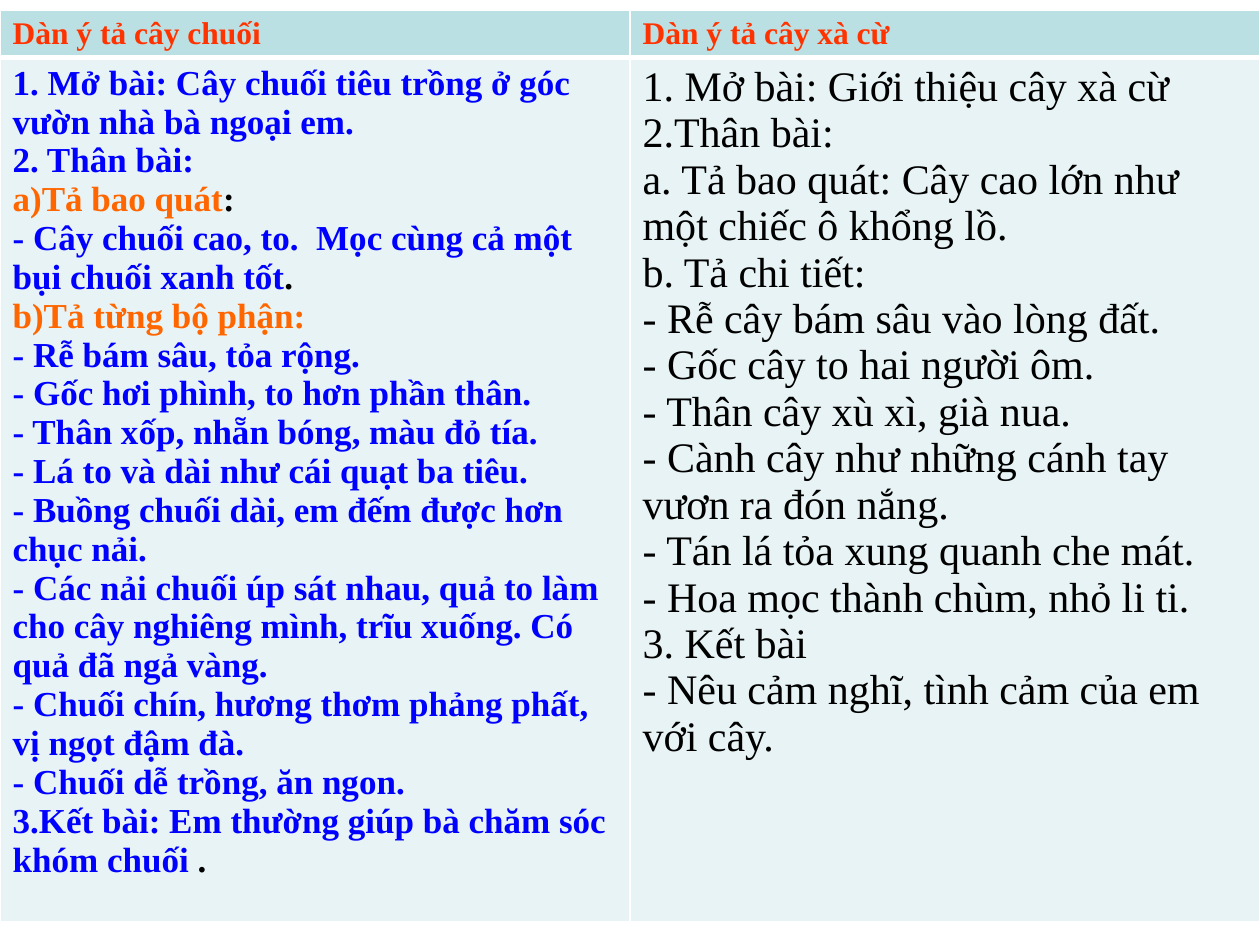
from lxml.etree import SubElement
from pptx import Presentation
from pptx.dml.color import RGBColor
from pptx.oxml.ns import qn
from pptx.util import Inches, Pt

FONT = "Times New Roman"
RED = RGBColor(0xFF, 0x33, 0x00)
BLUE = RGBColor(0x00, 0x00, 0xFF)
ORANGE = RGBColor(0xFF, 0x66, 0x00)
BLACK = RGBColor(0x00, 0x00, 0x00)
WHITE = RGBColor(0xFF, 0xFF, 0xFF)
HEADER_FILL = RGBColor(0xBB, 0xE0, 0xE3)
BODY_FILL = RGBColor(0xE7, 0xF3, 0xF4)

HEADINGS = ["Dàn ý tả cây chuối", "Dàn ý tả cây xà cừ"]
OVERVIEW = "Tả bao quát"
BANANA_OUTLINE = [
    [("1. Mở bài: Cây chuối tiêu trồng ở góc vườn nhà bà ngoại em.", BLUE)],
    [("2. Thân bài:", BLUE)],
    [(OVERVIEW, ORANGE), (":", BLACK)],
    [("- Cây chuối cao, to.  Mọc cùng cả một bụi chuối xanh tốt", BLUE), (".", BLACK)],
    [("b)Tả từng bộ phận:", ORANGE)],
    [("- Rễ bám sâu, tỏa rộng.", BLUE)],
    [("- Gốc hơi phình, to hơn phần thân.", BLUE)],
    [("- Thân xốp, nhẵn bóng, màu đỏ tía.", BLUE)],
    [("- Lá to và dài như cái quạt ba tiêu.", BLUE)],
    [("- Buồng chuối dài, em đếm được hơn chục nải.", BLUE)],
    [("- Các nải chuối úp sát nhau, quả to làm cho cây nghiêng mình, trĩu xuống. "
      "Có quả đã ngả vàng.", BLUE)],
    [("- Chuối chín, hương thơm phảng phất, vị ngọt đậm đà.", BLUE)],
    [("- Chuối dễ trồng, ăn ngon.", BLUE)],
    [("3.Kết bài: Em thường giúp bà chăm sóc khóm chuối", BLUE), (" .", BLACK)],
]
MAHOGANY_OUTLINE = [
    "1. Mở bài: Giới thiệu cây xà cừ",
    "2.Thân bài:",
    "a. Tả bao quát: Cây cao lớn như một chiếc ô khổng lồ.",
    "b. Tả chi tiết:",
    "- Rễ cây bám sâu vào lòng đất.",
    "- Gốc cây to hai người ôm.",
    "- Thân cây xù xì, già nua.",
    "- Cành cây như những cánh tay vươn ra đón nắng.",
    "- Tán lá tỏa xung quanh che mát.",
    "- Hoa mọc thành chùm, nhỏ li ti.",
    "3. Kết bài",
    "- Nêu cảm nghĩ, tình cảm của em với cây.",
]


def style_cell(cell, fill, bottom_width=1, top_width=1):
    """Give a cell white borders and a solid fill."""
    properties = cell._tc.get_or_add_tcPr()
    widths = {"a:lnL": 1, "a:lnR": 1, "a:lnT": top_width, "a:lnB": bottom_width}
    for side, width in widths.items():
        line = SubElement(properties, qn(side), w=str(Pt(width)))
        SubElement(SubElement(line, qn("a:solidFill")), qn("a:srgbClr"), val=str(WHITE))
    cell.fill.solid()
    cell.fill.fore_color.rgb = fill


def number_with_letter(paragraph):
    """Number a paragraph automatically in the form a)."""
    properties = paragraph._p.get_or_add_pPr()
    properties.set("marL", "0")
    properties.set("indent", "0")
    SubElement(properties, qn("a:buFontTx"))
    SubElement(properties, qn("a:buAutoNum"), type="alphaLcParenR")


def write_paragraphs(cell, outline, size, bold):
    """Write paragraphs made of (text, colour) pieces into a cell."""
    frame = cell.text_frame
    for index, pieces in enumerate(outline):
        paragraph = frame.add_paragraph() if index else frame.paragraphs[0]
        if pieces[0][0] == OVERVIEW:
            number_with_letter(paragraph)
        paragraph.font.name = FONT
        paragraph.font.size = Pt(size)
        paragraph.font.bold = bold
        for text, colour in pieces:
            run = paragraph.add_run()
            run.text = text
            run.font.color.rgb = colour


def add_outline_table(slide, left, top, width, height):
    """Place the two essay outlines side by side in the given box."""
    table = slide.shapes.add_table(2, 2, left, top, width, height).table
    header_height = Inches(0.37)
    table.rows[0].height = header_height
    table.rows[1].height = height - header_height
    for column, heading in enumerate(HEADINGS):
        header, body = table.cell(0, column), table.cell(1, column)
        style_cell(header, HEADER_FILL, bottom_width=3)
        style_cell(body, BODY_FILL, top_width=3)
        write_paragraphs(header, [[(heading, RED)]], 18, True)
    write_paragraphs(table.cell(1, 0), BANANA_OUTLINE, 20, True)
    mahogany = [[(text, BLACK)] for text in MAHOGANY_OUTLINE]
    write_paragraphs(table.cell(1, 1), mahogany, 24, False)


def main():
    """Build and save the slide."""
    presentation = Presentation()
    presentation.slide_width = Inches(10)
    presentation.slide_height = Inches(7.5)
    slide = presentation.slides.add_slide(presentation.slide_layouts[6])
    add_outline_table(slide, Inches(0), Inches(0.08), Inches(10), Inches(7.23))
    presentation.save("out.pptx")


if __name__ == "__main__":
    main()
